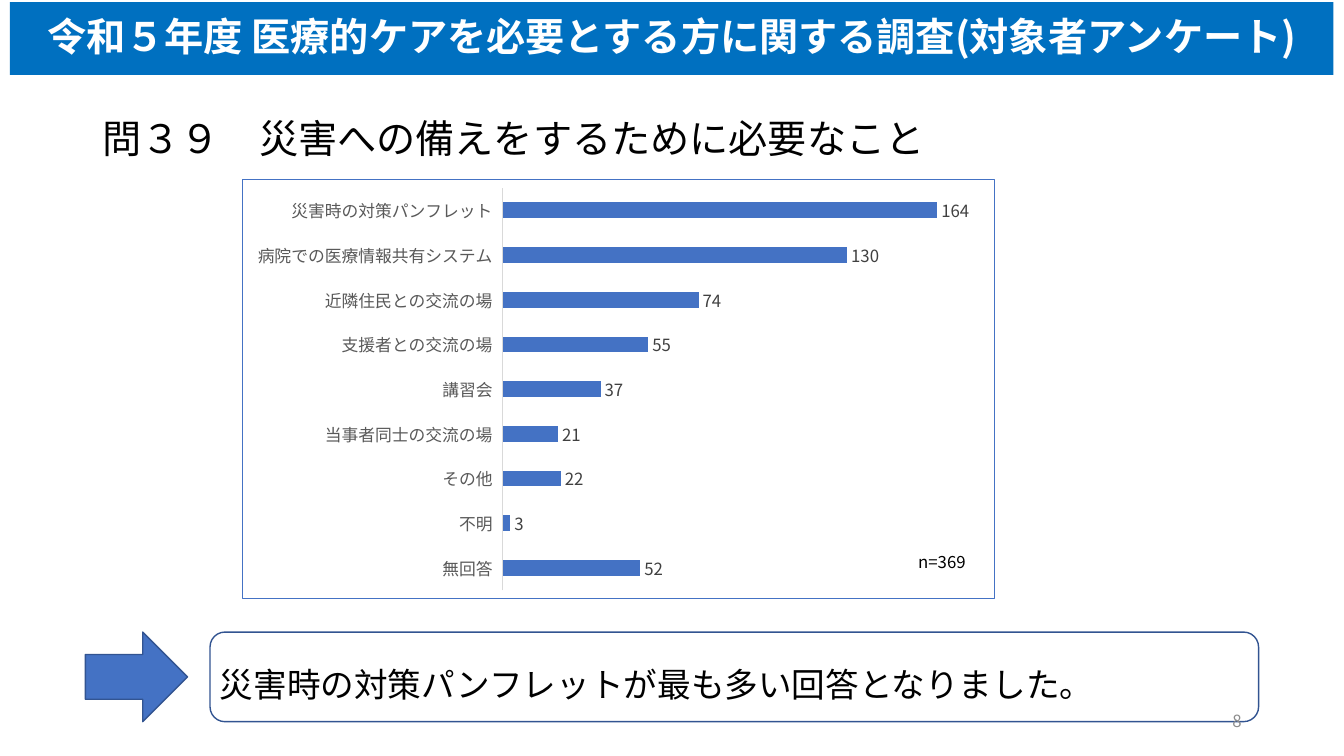
from lxml.etree import SubElement
from pptx import Presentation
from pptx.chart.data import CategoryChartData
from pptx.dml.color import RGBColor
from pptx.enum.chart import XL_CHART_TYPE, XL_LABEL_POSITION, XL_TICK_LABEL_POSITION, XL_TICK_MARK
from pptx.enum.shapes import MSO_SHAPE
from pptx.enum.text import MSO_ANCHOR, MSO_AUTO_SIZE, PP_ALIGN
from pptx.oxml import parse_xml
from pptx.oxml.ns import nsdecls, qn
from pptx.util import Pt

WHITE = RGBColor(0xFF, 0xFF, 0xFF)
BLACK = RGBColor(0x00, 0x00, 0x00)
BANNER_BLUE = RGBColor(0x00, 0x70, 0xC0)
BAR_BLUE = RGBColor(0x44, 0x72, 0xC4)
OUTLINE_BLUE = RGBColor(0x32, 0x54, 0x91)
AXIS_GREY = RGBColor(0xD9, 0xD9, 0xD9)
CATEGORY_GREY = RGBColor(0x59, 0x59, 0x59)
VALUE_GREY = RGBColor(0x40, 0x40, 0x40)
NUMBER_GREY = RGBColor(0x8C, 0x8C, 0x8C)

ANSWERS = [
    ("無回答", 52),
    ("不明", 3),
    ("その他", 22),
    ("当事者同士の交流の場", 21),
    ("講習会", 37),
    ("支援者との交流の場", 55),
    ("近隣住民との交流の場", 74),
    ("病院での医療情報共有システム", 130),
    ("災害時の対策パンフレット", 164),
]


class SurveyPage:
    font_name = "Noto Sans CJK JP"

    def __init__(self, page):
        self.page = page

    def style_font(self, font, size, color, bold=False):
        font.name = self.font_name
        font.size = Pt(size)
        font.bold = bold
        font.color.rgb = color

    def set_text(self, box, text, size, color=BLACK, align=PP_ALIGN.LEFT,
                 anchor=MSO_ANCHOR.MIDDLE, bold=False, spacing=1.0):
        frame = box.text_frame
        frame.word_wrap = True
        frame.auto_size = MSO_AUTO_SIZE.NONE
        frame.vertical_anchor = anchor
        para = frame.paragraphs[0]
        para.text = text
        para.alignment = align
        para.line_spacing = spacing
        self.style_font(para.font, size, color, bold)
        latin = para.font._element.find(qn("a:latin"))
        latin.addnext(parse_xml(f'<a:ea {nsdecls("a")} typeface="{self.font_name}"/>'))
        return para

    def place(self, box, left, top, width, height):
        box.left, box.top = Pt(left), Pt(top)
        box.width, box.height = Pt(width), Pt(height)

    def title(self, text, *area):
        box = self.page.shapes.title
        self.place(box, *area)
        box.fill.solid()
        box.fill.fore_color.rgb = BANNER_BLUE
        self.set_text(box, text, 28, WHITE, PP_ALIGN.CENTER, bold=True, spacing=0.9)

    def question(self, text, *area):
        box = self.page.placeholders[1]
        self.place(box, *area)
        para = self.set_text(box, text, 28, anchor=MSO_ANCHOR.TOP, spacing=0.9)
        para.space_before = Pt(10)
        properties = para._p.get_or_add_pPr()
        properties.set("marL", "0")
        properties.set("indent", "0")
        properties.find(qn("a:defRPr")).addprevious(parse_xml(f'<a:buNone {nsdecls("a")}/>'))

    def text(self, text, size, *area, **style):
        box = self.page.shapes.add_textbox(*map(Pt, area))
        self.set_text(box, text, size, **style)
        return box

    def shape(self, kind, *area, fill=None):
        shape = self.page.shapes.add_shape(kind, *map(Pt, area))
        shape.shadow.inherit = False
        if fill is None:
            shape.fill.background()
        else:
            shape.fill.solid()
            shape.fill.fore_color.rgb = fill
        shape.line.color.rgb = OUTLINE_BLUE
        shape.line.width = Pt(1)

    def bar_chart(self, answers, *area):
        data = CategoryChartData()
        data.categories = [name for name, count in answers]
        data.add_series("Series 1", [count for name, count in answers])
        chart = self.page.shapes.add_chart(XL_CHART_TYPE.BAR_CLUSTERED, *map(Pt, area), data).chart
        chart.has_title = False
        chart.has_legend = False
        self.style_font(chart.font, 12, BLACK)

        values = chart.value_axis
        values.visible = False
        values.has_major_gridlines = False
        values.minimum_scale, values.maximum_scale = 0, 180

        names = chart.category_axis
        names.major_tick_mark = XL_TICK_MARK.NONE
        names.tick_label_position = XL_TICK_LABEL_POSITION.LOW
        names.format.line.color.rgb = AXIS_GREY
        names.format.line.width = Pt(0.75)
        self.style_font(names.tick_labels.font, 12, CATEGORY_GREY)

        plot = chart.plots[0]
        plot.gap_width = 182
        plot.vary_by_categories = False
        plot.has_data_labels = True
        labels = plot.data_labels
        labels.show_value = True
        labels.position = XL_LABEL_POSITION.OUTSIDE_END
        self.style_font(labels.font, 12, VALUE_GREY)
        bars = plot.series[0].format.fill
        bars.solid()
        bars.fore_color.rgb = BAR_BLUE

        frame = parse_xml(f'<c:spPr {nsdecls("c", "a")}/>')
        border = SubElement(frame, qn("a:ln"), w=str(Pt(0.75)))
        for parent, color in ((frame, WHITE), (border, BAR_BLUE)):
            fill = SubElement(parent, qn("a:solidFill"))
            SubElement(fill, qn("a:srgbClr"), val=str(color))
        frame.append(border)
        chart._chartSpace.find(qn("c:txPr")).addprevious(frame)


def main():
    deck = Presentation()
    deck.slide_width, deck.slide_height = Pt(960), Pt(540)
    survey = SurveyPage(deck.slides.add_slide(deck.slide_layouts[1]))

    survey.title("令和５年度 医療的ケアを必要とする方に関する調査(対象者アンケート)", 7, 1.5, 945.5, 52)
    survey.question("問３９　災害への備えをするために必要なこと", 66, 82, 828, 446)
    survey.bar_chart(ANSWERS, 173, 128, 538, 300)

    sample = survey.text("n=369", 12, 649, 392, 62, 25, align=PP_ALIGN.CENTER)
    sample.text_frame.margin_left = sample.text_frame.margin_top = 0
    sample.text_frame.margin_right = Pt(14.4)
    sample.text_frame.margin_bottom = Pt(5.76)

    survey.text("災害時の対策パンフレットが最も多い回答となりました。", 24, 150, 441, 757, 99, spacing=0.9)
    survey.shape(MSO_SHAPE.RIGHT_ARROW, 61, 451.5, 73, 64, fill=BAR_BLUE)
    survey.shape(MSO_SHAPE.ROUNDED_RECTANGLE, 150, 451.5, 749, 64)
    survey.text("8", 12, 678, 500.5, 216, 29, color=NUMBER_GREY, align=PP_ALIGN.RIGHT)

    deck.save("out.pptx")


if __name__ == "__main__":
    main()
